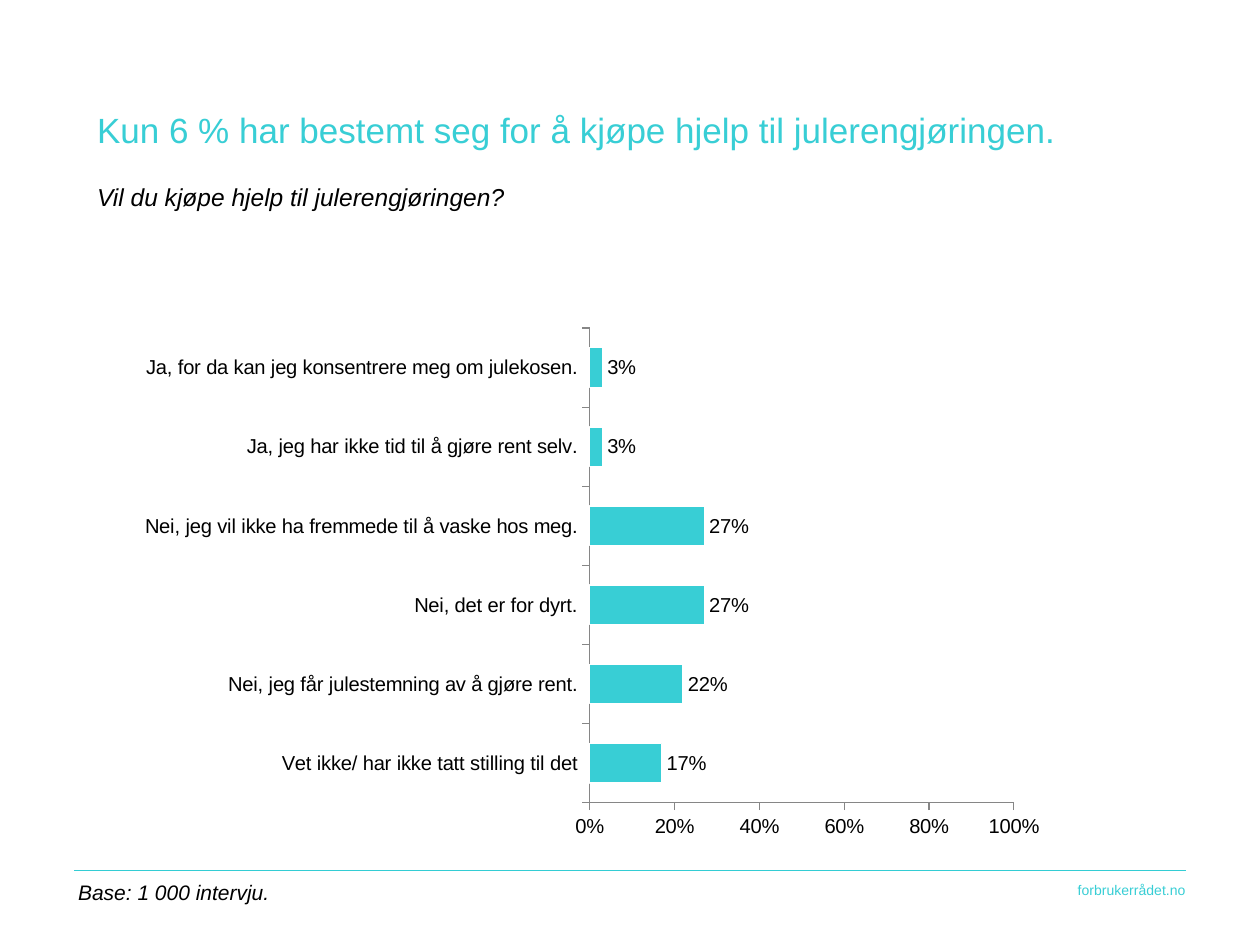
from typing import NamedTuple

from lxml import etree
from pptx import Presentation
from pptx import util as u
from pptx.chart.data import CategoryChartData
from pptx.dml.color import RGBColor
from pptx.enum import chart as ch, shapes, text
from pptx.oxml import parse_xml
from pptx.oxml.ns import nsdecls, qn

FONT = "Arial"
TEAL = "38CED5"
BLACK = "000000"
GREY = "868686"


class Answer(NamedTuple):
    label: str
    share: float


class Box(NamedTuple):
    left: float
    top: float
    width: float
    height: float


ANSWERS = [
    Answer("Vet ikke/ har ikke tatt stilling til det", 0.17),
    Answer("Nei, jeg får julestemning av å gjøre rent.", 0.22),
    Answer("Nei, det er for dyrt.", 0.27),
    Answer("Nei, jeg vil ikke ha fremmede til å vaske hos meg.", 0.27),
    Answer("Ja, jeg har ikke tid til å gjøre rent selv.", 0.03),
    Answer("Ja, for da kan jeg konsentrere meg om julekosen.", 0.03),
]


def rgb(color: str) -> RGBColor:
    return RGBColor.from_string(color)


def inches(box: Box) -> list:
    return [u.Inches(v) for v in box]


def add_frame(s, box: Box, anchor=text.MSO_ANCHOR.TOP):
    tf = s.shapes.add_textbox(*inches(box)).text_frame
    tf.word_wrap = True
    tf.vertical_anchor = anchor
    tf.margin_left = tf.margin_right = tf.margin_top = tf.margin_bottom = 0
    return tf


def write(p, content: str, *, size: float, color: str = BLACK,
          italic: bool = False, align=text.PP_ALIGN.LEFT, before: float = 0) -> None:
    p.alignment = align
    p.space_before = u.Pt(before)
    r = p.add_run()
    r.text = content
    r.font.name = FONT
    r.font.size = u.Pt(size)
    r.font.italic = italic
    r.font.color.rgb = rgb(color)


def add_rule(s, left: float, right: float, y: float) -> None:
    sp = s.shapes.add_connector(shapes.MSO_CONNECTOR.STRAIGHT, u.Inches(left),
                                u.Inches(y), u.Inches(right), u.Inches(y))
    sp.line.color.rgb = rgb("33CDD4")
    sp.line.width = u.Pt(0.92)
    etree.SubElement(sp._element.spPr, qn("a:effectLst"))


def set_inner_plot(chart, box: Box) -> None:
    area = chart._chartSpace.chart.plotArea
    for old in area.findall(qn("c:layout")):
        area.remove(old)
    places = "".join(f'<c:{k} val="{v}"/>' for k, v in zip("xywh", box))
    area.insert(0, parse_xml(
        f'<c:layout {nsdecls("c")}><c:manualLayout><c:layoutTarget val="inner"/>'
        f'<c:xMode val="edge"/><c:yMode val="edge"/>{places}'
        '</c:manualLayout></c:layout>'))


def add_bars(s, box: Box, answers: list[Answer]) -> None:
    data = CategoryChartData(number_format="0%")
    data.categories = [a.label for a in answers]
    data.add_series("Series 1", [a.share for a in answers])
    chart = s.shapes.add_chart(ch.XL_CHART_TYPE.BAR_CLUSTERED, *inches(box), data).chart
    chart.has_legend = chart.has_title = False
    chart.font.name = FONT
    chart.font.size = u.Pt(11.5)
    chart.font.color.rgb = rgb(BLACK)
    set_inner_plot(chart, Box(0.5, 0.09, 0.455, 0.8))

    for axis in (chart.category_axis, chart.value_axis):
        axis.has_major_gridlines = False
        axis.major_tick_mark = ch.XL_TICK_MARK.OUTSIDE
        axis.format.line.color.rgb = rgb(GREY)
        axis.format.line.width = u.Pt(0.75)
    axis = chart.value_axis
    axis.minimum_scale, axis.maximum_scale, axis.major_unit = 0, 1, 0.2
    axis.tick_labels.number_format = "0%"
    axis.tick_labels.number_format_is_linked = False

    plot = chart.plots[0]
    plot.gap_width = 100
    plot.vary_by_categories = False
    series = plot.series[0]
    series.format.fill.solid()
    series.format.fill.fore_color.rgb = rgb(TEAL)
    series.format.line.color.rgb = rgb("FFFFFF")
    series.format.line.width = u.Pt(0.75)
    labels = series.data_labels
    labels.show_value = True
    labels.position = ch.XL_LABEL_POSITION.OUTSIDE_END
    labels.number_format = "0%"
    labels.number_format_is_linked = False


def main() -> None:
    prs = Presentation()
    prs.slide_width, prs.slide_height = u.Inches(10), u.Inches(7.5)
    s = prs.slides.add_slide(prs.slide_layouts[6])

    add_rule(s, 0.59, 9.41, 6.91)
    site = add_frame(s, Box(6.6, 7, 2.81, 0.14))
    write(site.paragraphs[0], "forbrukerrådet.no", size=8, color=TEAL,
          align=text.PP_ALIGN.RIGHT)

    add_bars(s, Box(0.98, 2.18, 7.4, 4.71), ANSWERS)

    heading = add_frame(s, Box(0.77, 0.86, 7.95, 0.8))
    write(heading.paragraphs[0],
          "Kun 6 % har bestemt seg for å kjøpe hjelp til julerengjøringen.",
          size=20, color=TEAL)
    write(heading.add_paragraph(), "Vil du kjøpe hjelp til julerengjøringen?",
          size=14, italic=True, before=18)

    base = add_frame(s, Box(0.62, 6.98, 5.9, 0.2), text.MSO_ANCHOR.BOTTOM)
    write(base.paragraphs[0], "Base: 1 000 intervju.", size=12, italic=True)

    prs.save("out.pptx")


if __name__ == "__main__":
    main()
